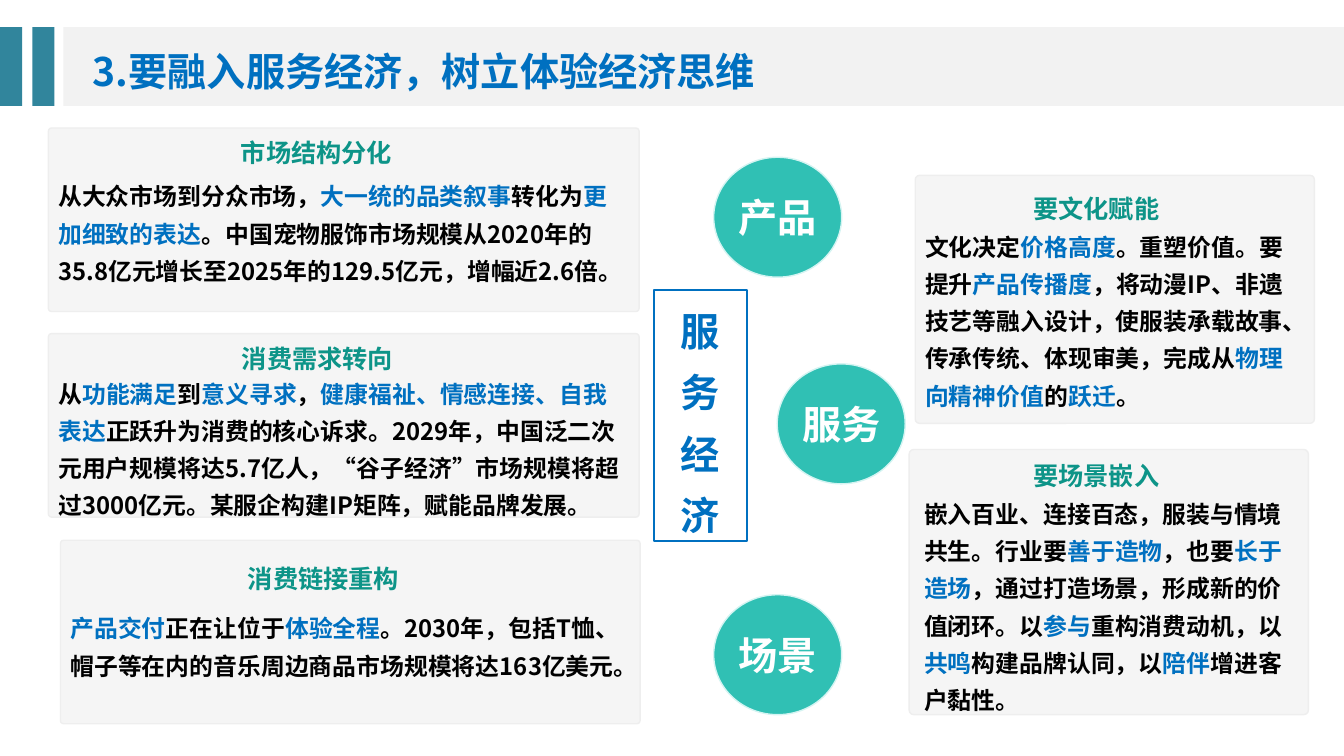
from dataclasses import dataclass
from typing import Optional

from lxml.etree import SubElement
from pptx import Presentation
from pptx.dml.color import RGBColor
from pptx.enum.shapes import MSO_SHAPE
from pptx.enum.text import MSO_ANCHOR, MSO_AUTO_SIZE, PP_ALIGN
from pptx.oxml.ns import qn
from pptx.util import Inches, Pt

BLUE = RGBColor(0x00, 0x70, 0xC0)
BLACK = RGBColor(0x00, 0x00, 0x00)
WHITE = RGBColor(0xFF, 0xFF, 0xFF)
GREEN = RGBColor(0x0D, 0x94, 0x88)
TURQUOISE = RGBColor(0x30, 0xC0, 0xB4)
PALE_TURQUOISE = RGBColor(0xD4, 0xF4, 0xF2)
TEAL = RGBColor(0x31, 0x85, 0x9C)
BAND_GREY = RGBColor(0xF2, 0xF2, 0xF2)
CARD_GREY = RGBColor(0xF5, 0xF5, 0xF5)
EDGE_GREY = RGBColor(0xEE, 0xEE, 0xEE)
CJK_FONT = "Noto Sans CJK SC"
LINE_PITCH = 1.565  # line height as a share of the text size

# Slide grid: 160 columns by 90 rows
deck = Presentation()
deck.slide_width, deck.slide_height = Inches(13.33), Inches(7.5)
COLUMN, ROW = deck.slide_width / 160, deck.slide_height / 90
slide = deck.slides.add_slide(deck.slide_layouts[5])


@dataclass
class Area:
    column: float
    row: float
    columns: float
    rows: float

    def place(self) -> tuple:
        return (round(self.column * COLUMN), round(self.row * ROW),
                round(self.columns * COLUMN), round(self.rows * ROW))


@dataclass
class Card:
    panel: Area
    heading_area: Area
    body_area: Area
    heading: str
    body: str  # *...* marks highlighted words
    bottom_inset: float = 0.05


@dataclass
class Circle:
    column: float
    row: float
    label: str


CARDS = [
    Card(Area(5.76, 15.24, 70.32, 21.84), Area(14.88, 13.68, 45.6, 9),
         Area(5.76, 21.6, 70.32, 11.4), "市场结构分化",
         "从大众市场到分众市场，*大一统的品类叙事*转化为*更加细致的表达*。"
         "中国宠物服饰市场规模从2020年的35.8亿元增长至2025年的129.5亿元，增幅近2.6倍。"),
    Card(Area(5.76, 39.72, 70.32, 21.84), Area(15, 38.16, 45.6, 9),
         Area(5.76, 45, 70.32, 15.96), "消费需求转向",
         "从*功能满足*到*意义寻求*，*健康福祉、情感连接、自我表达*正跃升为消费的核心诉求。"
         "2029年，中国泛二次元用户规模将达5.7亿人，“谷子经济”市场规模将超过3000亿元。"
         "某服企构建IP矩阵，赋能品牌发展。"),
    Card(Area(7.2, 64.32, 69, 21.84), Area(16.2, 64.32, 44.64, 9),
         Area(7.2, 70.8, 69, 11.4), "消费链接重构",
         "*产品交付*正在让位于*体验全程*。"
         "2030年，包括T恤、帽子等在内的音乐周边商品市场规模将达163亿美元。"),
    Card(Area(108.96, 20.88, 47.52, 29.52), Area(115.08, 18.72, 30.84, 12.24),
         Area(108.96, 29.52, 47.52, 20.88), "要文化赋能",
         "文化决定*价格高度*。重塑价值。要提升*产品传播度*，将动漫IP、非遗技艺等融入设计，"
         "使服装承载故事、传承传统、体现审美，完成从*物理向精神价值*的*跃迁*。",
         bottom_inset=0.42),
    Card(Area(108.24, 53.52, 47.52, 31.56), Area(115.08, 50.4, 30.84, 12.36),
         Area(108.84, 58.92, 47.52, 25.68), "要场景嵌入",
         "嵌入百业、连接百态，服装与情境共生。行业要*善于造物*，也要*长于造场*，"
         "通过打造场景，形成新的价值闭环。以*参与*重构消费动机，以*共鸣*构建品牌认同，"
         "以*陪伴*增进客户黏性。"),
]
CIRCLES = [Circle(84.96, 18.72, "产品"), Circle(92.52, 43.32, "服务"),
           Circle(84.96, 70.8, "场景")]


def write(frame, text: str, size: float, color: RGBColor, font: str = CJK_FONT,
          align=PP_ALIGN.CENTER, spaced: bool = False, wrap: bool = True,
          anchor=MSO_ANCHOR.MIDDLE) -> None:
    """Fill a text frame, one paragraph per line, with *...* in blue."""
    frame_format = {"auto_size": MSO_AUTO_SIZE.NONE, "word_wrap": wrap,
                    "vertical_anchor": anchor}
    for name, value in frame_format.items():
        setattr(frame, name, value)
    for index, line in enumerate(text.split("\n")):
        paragraph = frame.add_paragraph() if index else frame.paragraphs[0]
        paragraph.alignment = align
        if spaced:
            paragraph.line_spacing = Pt(round(size * LINE_PITCH, 1))
        for part, words in enumerate(line.split("*")):
            if not words:
                continue
            run = paragraph.add_run()
            run.text = words
            run_format = {"name": font, "size": Pt(size), "bold": True}
            for name, value in run_format.items():
                setattr(run.font, name, value)
            run.font.color.rgb = BLUE if part % 2 else color
            SubElement(run.font._element, qn("a:ea"), typeface=CJK_FONT)


def add_box(kind: MSO_SHAPE, area: Area, fill: Optional[RGBColor] = None,
            edge: Optional[RGBColor] = None, edge_width: float = 1):
    box = slide.shapes.add_shape(kind, *area.place())
    box.shadow.inherit = False
    if fill is None:
        box.fill.background()
    else:
        box.fill.solid()
        box.fill.fore_color.rgb = fill
    if edge is None:
        box.line.fill.background()
    else:
        box.line.color.rgb = edge
        box.line.width = Pt(edge_width)
    return box


def add_card(card: Card) -> None:
    panel = add_box(MSO_SHAPE.ROUNDED_RECTANGLE, card.panel, CARD_GREY, EDGE_GREY)
    panel.adjustments[0] = 0.017
    heading = slide.shapes.add_textbox(*card.heading_area.place())
    write(heading.text_frame, card.heading, 18, GREEN)
    body = slide.shapes.add_textbox(*card.body_area.place())
    body.text_frame.margin_bottom = Inches(card.bottom_inset)
    write(body.text_frame, card.body, 17, BLACK, align=PP_ALIGN.LEFT, spaced=True)


def add_circle(circle: Circle) -> None:
    disc = add_box(MSO_SHAPE.OVAL, Area(circle.column, circle.row, 15.24, 14.28),
                   TURQUOISE, PALE_TURQUOISE)
    disc.text_frame.margin_top = disc.text_frame.margin_bottom = Inches(0.02)
    write(disc.text_frame, circle.label, 28, WHITE, font="Arial", wrap=False)


# Header band and its two bars
add_box(MSO_SHAPE.RECTANGLE, Area(7.56, 3.24, 152.44, 9.36), BAND_GREY)
for bar_column in (0, 3.84):
    add_box(MSO_SHAPE.RECTANGLE, Area(bar_column, 3.24, 2.64, 9.36), TEAL)

# Title, brought in front of the band
title = slide.shapes.title
title.left, title.top, title.width, title.height = Area(9.84, 5.04, 150.12, 8.16).place()
write(title.text_frame, "3.要融入服务经济，树立体验经济思维", 28, BLUE,
      align=PP_ALIGN.LEFT, anchor=MSO_ANCHOR.TOP)
slide.shapes._spTree.append(title._element)

# Central theme
theme = add_box(MSO_SHAPE.RECTANGLE, Area(77.88, 34.56, 11.04, 29.88),
                edge=BLUE, edge_width=1.5)
write(theme.text_frame, "服\n务\n经\n济", 28, BLUE, font="Arial", spaced=True)

# Cards and circles
for card in CARDS:
    add_card(card)
for circle in CIRCLES:
    add_circle(circle)

deck.save("out.pptx")
